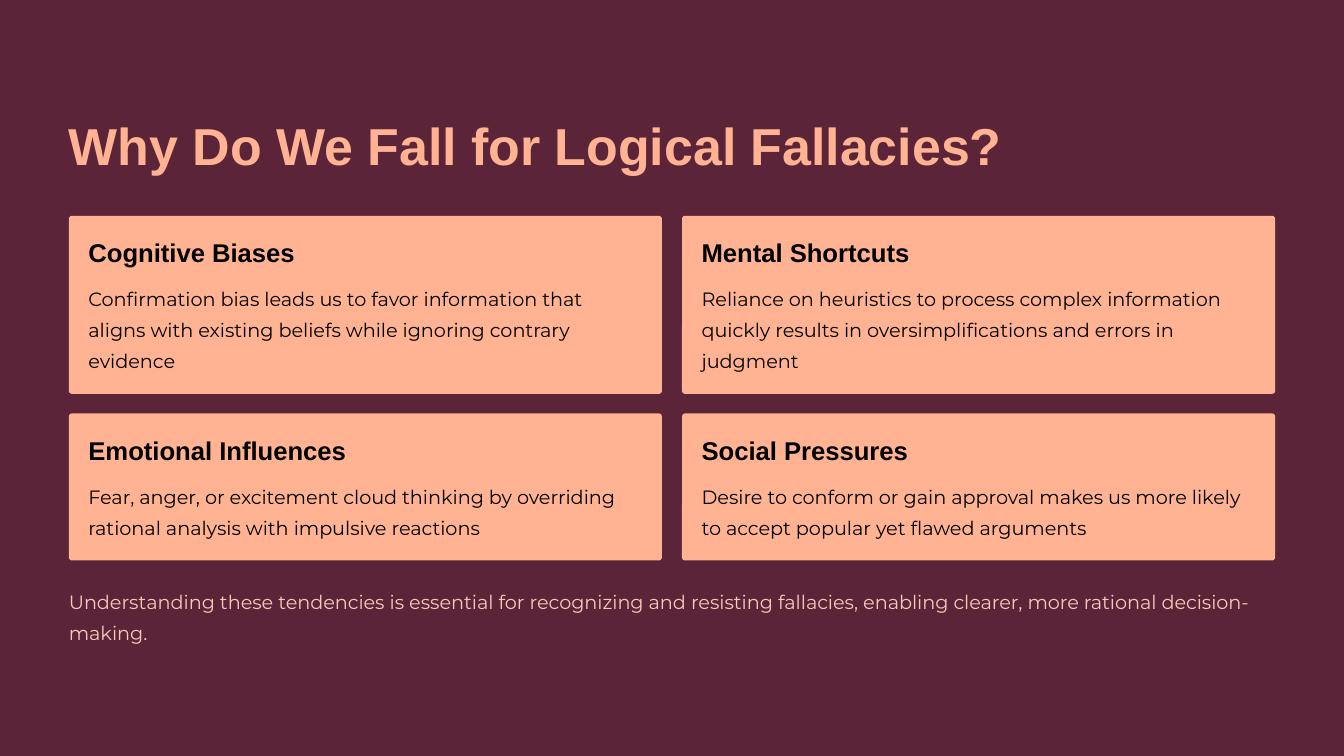
from pptx import Presentation
from pptx.dml.color import RGBColor
from pptx.enum.shapes import MSO_SHAPE as Shape
from pptx.util import Pt

COLORS = {"plum": "5C2438", "peach": "FFB393", "ink": "000000", "blush": "F4CAB8"}
TITLE = {"name": "Arial", "size": Pt(44.5), "bold": True}
HEADING = {"name": "Arial", "size": Pt(22), "bold": True}
BODY = {"name": "Montserrat", "size": Pt(16.5), "bold": False}

MARGIN = 59
CARD_WIDTH = 508.4
COLUMN_STEP = 525.6
PADDING = 16.8
BODY_OFFSET = 54.8
CORNER = 2.57

# Each row: top, height, then (heading, body) for every card
CARD_ROWS = [
    (185, 152.6, [
        ("Cognitive Biases",
         "Confirmation bias leads us to favor information that aligns with "
         "existing beliefs while ignoring contrary evidence"),
        ("Mental Shortcuts",
         "Reliance on heuristics to process complex information quickly "
         "results in oversimplifications and errors in judgment"),
    ]),
    (354.4, 126, [
        ("Emotional Influences",
         "Fear, anger, or excitement cloud thinking by overriding rational "
         "analysis with impulsive reactions"),
        ("Social Pressures",
         "Desire to conform or gain approval makes us more likely to accept "
         "popular yet flawed arguments"),
    ]),
]


def color(name):
    return RGBColor.from_string(COLORS[name])


def add_text(text, left, top, width, height, font_format, color_name, spacing):
    box = slide.shapes.add_textbox(Pt(left), Pt(top), Pt(width), Pt(height))
    frame = box.text_frame
    frame.word_wrap = True
    for side in ("left", "top", "right", "bottom"):
        setattr(frame, f"margin_{side}", 0)
    paragraph = frame.paragraphs[0]
    paragraph.line_spacing = Pt(spacing)
    run = paragraph.add_run()
    run.text = text
    for key, value in font_format.items():
        setattr(run.font, key, value)
    run.font.color.rgb = color(color_name)


# Slide and background
presentation = Presentation()
presentation.slide_width, presentation.slide_height = Pt(1152), Pt(648)
slide = presentation.slides.add_slide(presentation.slide_layouts[6])
slide.background.fill.solid()
slide.background.fill.fore_color.rgb = color("plum")

# Title, wide enough for a single line
add_text("Why Do We Fall for Logical Fallacies?", MARGIN, 95, 820, 56,
         TITLE, "peach", 56)

# Cards
for top, height, cards in CARD_ROWS:
    for column, (heading, body) in enumerate(cards):
        left = MARGIN + column * COLUMN_STEP
        card = slide.shapes.add_shape(Shape.ROUNDED_RECTANGLE, Pt(left), Pt(top),
                                      Pt(CARD_WIDTH), Pt(height))
        card.adjustments[0] = CORNER / height
        card.shadow.inherit = False
        card.fill.solid()
        card.fill.fore_color.rgb = color("peach")
        card.line.fill.background()

        text_left = left + PADDING
        text_width = CARD_WIDTH - 2 * PADDING
        add_text(heading, text_left, top + PADDING, 230, 28, HEADING, "ink", 28)
        add_text(body, text_left, top + BODY_OFFSET, text_width,
                 height - BODY_OFFSET - PADDING, BODY, "ink", 26.5)

# Closing remark
add_text("Understanding these tendencies is essential for recognizing and resisting "
         "fallacies, enabling clearer, more rational decision-making.",
         MARGIN, 499, COLUMN_STEP + CARD_WIDTH, 54, BODY, "blush", 26.5)

presentation.save("out.pptx")
